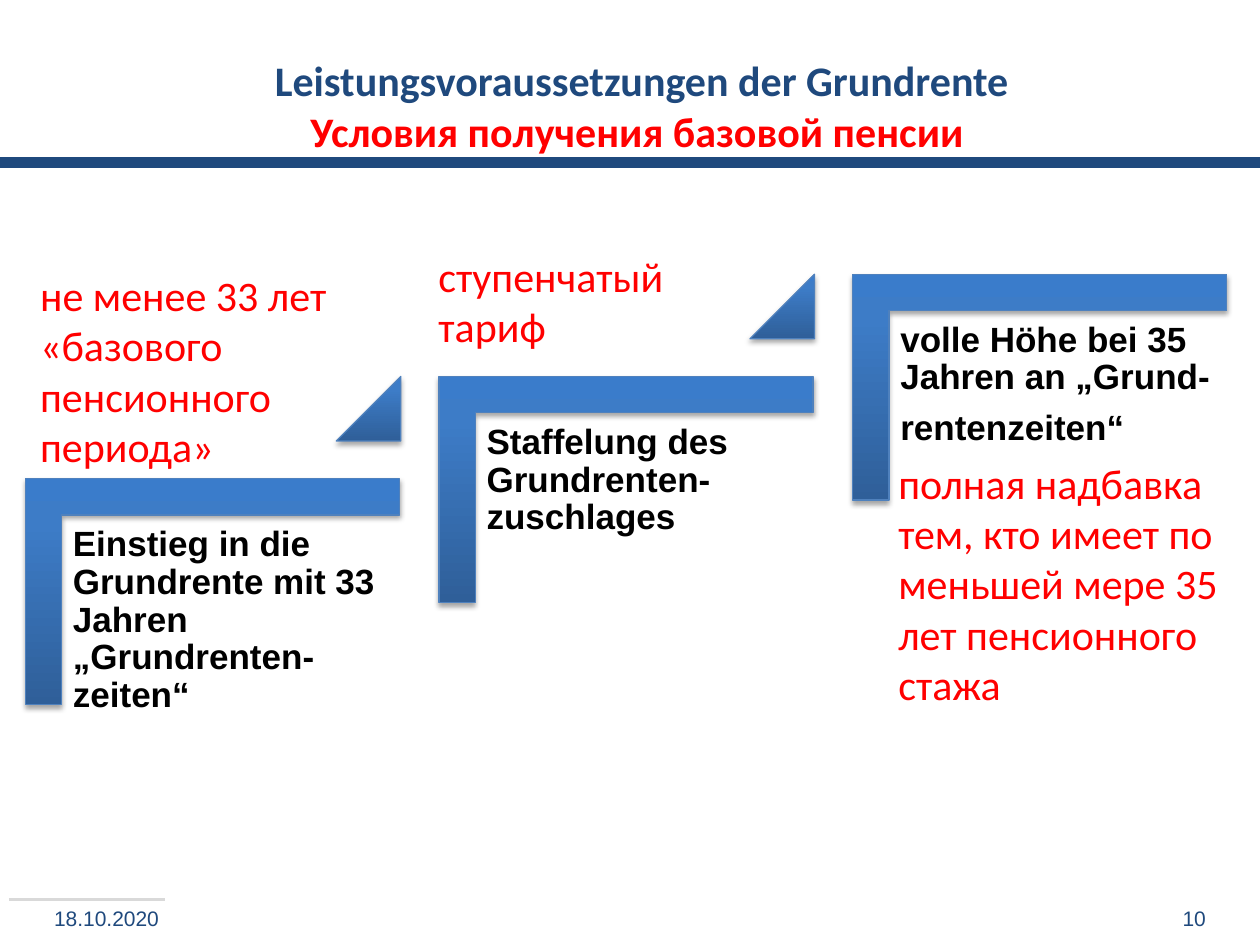
from dataclasses import dataclass

from pptx import Presentation
from pptx.dml.color import RGBColor
from pptx.enum.shapes import MSO_CONNECTOR, MSO_SHAPE
from pptx.enum.text import MSO_ANCHOR, PP_ALIGN
from pptx.oxml import parse_xml
from pptx.oxml.ns import nsdecls
from pptx.util import Cm, Pt

COLORS = {
    "navy": "1F497D", "red": "FF0000", "black": "000000", "gray": "D9D9D9",
    "edge": "4F81BD", "dark": "2F5F99", "mid": "3D7CC7", "light": "3A7CCB",
}
STEP_LEFT, STEP_TOP = 0.51, 9.65
STEP_DX, STEP_DY = 8.34, -2.06
STEP_W, STEP_H = 7.54, 4.55
TRIANGLE = 1.3


@dataclass
class Box:
    left: float
    top: float
    width: float
    height: float


@dataclass
class Style:
    font: str
    size: int
    color: str
    bold: bool = False
    align: PP_ALIGN = PP_ALIGN.LEFT
    anchor: MSO_ANCHOR = MSO_ANCHOR.TOP
    inset: float = 0
    line_spacing: float = 1.0
    space_after: int = 0


@dataclass
class Label:
    box: Box
    text: str
    style: Style


NOTE = Style("Calibri", 24, "red", anchor=MSO_ANCHOR.MIDDLE)
STEP = Style("Arial", 20, "black", bold=True, inset=0.2, line_spacing=0.9, space_after=7)
TITLE = Style("Calibri", 24, "navy", bold=True, align=PP_ALIGN.CENTER, anchor=MSO_ANCHOR.MIDDLE)
DATE = Style("Arial", 12, "navy")
NUMBER = Style("Arial", 12, "navy", align=PP_ALIGN.RIGHT)

STEPS = [
    ["Einstieg in die Grundrente mit 33 Jahren „Grundrenten-zeiten“"],
    ["Staffelung des Grundrenten-zuschlages"],
    ["volle Höhe bei 35 Jahren an „Grund-", "rentenzeiten“"],
]
LABELS = [
    Label(Box(1.09, 18.26, 2.97, 0.51), "18.10.2020", DATE),
    Label(Box(22.15, 18.26, 2.16, 0.51), "10", NUMBER),
    Label(Box(0.81, 5.41, 6.02, 4.11), "не менее 33 лет «базового пенсионного периода»", NOTE),
    Label(Box(18.11, 9.19, 6.78, 5.13),
          "полная надбавка тем, кто имеет по меньшей мере 35 лет пенсионного стажа", NOTE),
    Label(Box(8.84, 5.03, 6.02, 2.06), "ступенчатый тариф", NOTE),
]


def rgb(name: str) -> RGBColor:
    return RGBColor.from_string(COLORS[name])


def place(box: Box) -> list:
    return [Cm(v) for v in (box.left, box.top, box.width, box.height)]


def add_text(s, box: Box, lines: list[str], style: Style):
    tf = s.shapes.add_textbox(*place(box)).text_frame
    tf.word_wrap = True
    tf.vertical_anchor = style.anchor
    tf.margin_left = tf.margin_right = tf.margin_top = tf.margin_bottom = Cm(style.inset)
    for i, line in enumerate(lines):
        p = tf.add_paragraph() if i else tf.paragraphs[0]
        p.alignment = style.align
        p.line_spacing = style.line_spacing
        p.space_after = Pt(style.space_after)
        p.font.name, p.font.size, p.font.bold = style.font, Pt(style.size), style.bold
        p.font.color.rgb = rgb(style.color)
        p.add_run().text = line
    return tf


def add_rule(s, left: float, right: float, y: float, color: str, width: float) -> None:
    line = s.shapes.add_connector(MSO_CONNECTOR.STRAIGHT, Cm(left), Cm(y), Cm(right), Cm(y))
    line.line.color.rgb = rgb(color)
    line.line.width = Pt(width)
    line._element.spPr.append(parse_xml(f"<a:effectLst {nsdecls('a')}/>"))


def add_glossy(s, kind: MSO_SHAPE, box: Box, adjustments: list[float], rotation: int = 0) -> None:
    """Add a shape shaded from dark at the bottom to light at the top, with a soft shadow."""
    sp = s.shapes.add_shape(kind, *place(box))
    sp.rotation = rotation
    for i, value in enumerate(adjustments):
        sp.adjustments[i] = value
    stops = "".join(
        f'<a:gs pos="{pos * 1000}"><a:srgbClr val="{COLORS[name]}"/></a:gs>'
        for pos, name in ((0, "dark"), (80, "mid"), (100, "light")))
    sp._element.spPr.append(parse_xml(
        f'<a:gradFill {nsdecls("a")} rotWithShape="0"><a:gsLst>{stops}</a:gsLst>'
        '<a:lin ang="16200000" scaled="0"/></a:gradFill>'))
    sp.line.color.rgb = rgb("edge")
    sp.line.width = Pt(0.75)
    sp._element.spPr.append(parse_xml(
        f'<a:effectLst {nsdecls("a")}><a:outerShdw blurRad="{Pt(3.1)}" dist="{Pt(1.8)}" '
        f'dir="5400000" rotWithShape="0"><a:srgbClr val="{COLORS["black"]}">'
        '<a:alpha val="35000"/></a:srgbClr></a:outerShdw></a:effectLst>'))


def add_step(s, index: int, lines: list[str]) -> None:
    left, top = STEP_LEFT + index * STEP_DX, STEP_TOP + index * STEP_DY
    shift = (STEP_W - STEP_H) / 2  # the corner is turned by 90 degrees about its centre
    add_glossy(s, MSO_SHAPE.CORNER, Box(left + shift, top - shift, STEP_H, STEP_W),
               [0.161, 0.161], 90)
    add_text(s, Box(left + 0.76, top + 0.76, 6.81, 5.97), lines, STEP)
    if index < len(STEPS) - 1:
        add_glossy(s, MSO_SHAPE.ISOSCELES_TRIANGLE,
                   Box(left + 6.27, top + STEP_DY, TRIANGLE, TRIANGLE), [1])


def main() -> None:
    prs = Presentation()
    prs.slide_width, prs.slide_height = Cm(25.4), Cm(19.05)
    s = prs.slides.add_slide(prs.slide_layouts[6])

    add_rule(s, 0.18, 3.33, 18.13, "gray", 1.5)
    add_rule(s, 0, 25.4, 3.28, "navy", 6)

    tf = add_text(s, Box(1.75, 1.09, 22.38, 2.06),
                  ["Leistungsvoraussetzungen der Grundrente"], TITLE)
    p = tf.paragraphs[0]
    p.add_line_break()
    r = p.add_run()
    r.text = "Условия получения базовой пенсии "
    r.font.color.rgb = rgb("red")

    for i, lines in enumerate(STEPS):
        add_step(s, i, lines)
    for label in LABELS:
        add_text(s, label.box, [label.text], label.style)

    prs.save("out.pptx")


if __name__ == "__main__":
    main()
